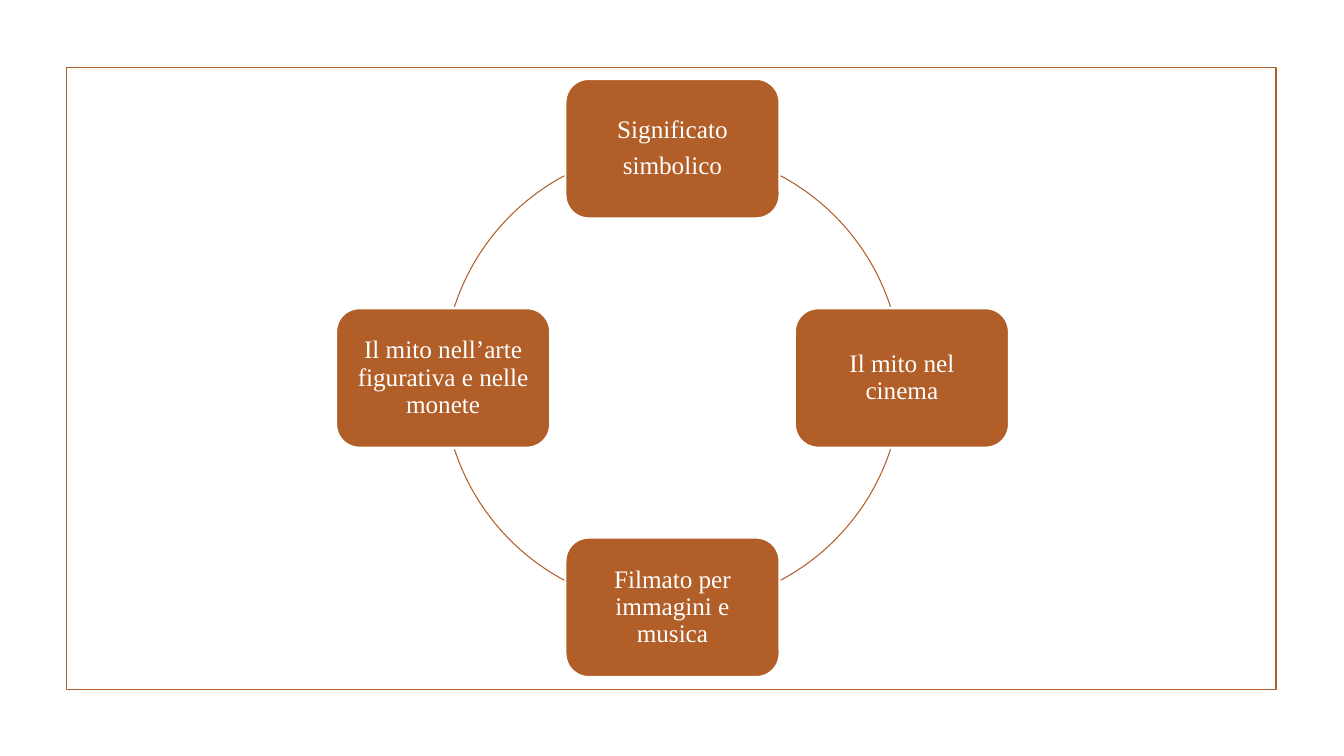
import math
import pptx
import pptx.util
import pptx.dml.color
import pptx.enum.shapes
import pptx.enum.text

Inches = pptx.util.Inches
Pt = pptx.util.Pt
SHAPE = pptx.enum.shapes.MSO_SHAPE

TOPICS = [
    ["Significato", "simbolico"],
    ["Il mito nel cinema"],
    ["Filmato per immagini e musica"],
    ["Il mito nell’arte figurativa e nelle monete"],
]

RUST = pptx.dml.color.RGBColor(0xB1, 0x5E, 0x28)
WHITE = pptx.dml.color.RGBColor(0xFF, 0xFF, 0xFF)
FONT = "Times New Roman"

CENTER_X, CENTER_Y = 6.67, 3.75
RADIUS = 2.275
TOPIC_W, TOPIC_H = 2.12, 1.38
ARC_START, ARC_END = 18.1, 61.9
DEGREE = 0.6


def add_outlined(slide, kind, left, top, width, height, color, weight):
    shape = slide.shapes.add_shape(
        kind, Inches(left), Inches(top), Inches(width), Inches(height))
    shape.shadow.inherit = False
    shape.fill.background()
    shape.line.color.rgb = color
    shape.line.width = Pt(weight)
    return shape


def add_topic(slide, lines, angle):
    x = CENTER_X + RADIUS * math.cos(angle)
    y = CENTER_Y + RADIUS * math.sin(angle)
    topic = add_outlined(slide, SHAPE.ROUNDED_RECTANGLE, x - TOPIC_W / 2,
                         y - TOPIC_H / 2, TOPIC_W, TOPIC_H, WHITE, 1.25)
    topic.fill.solid()
    topic.fill.fore_color.rgb = RUST
    frame = topic.text_frame
    frame.word_wrap = True
    frame.vertical_anchor = pptx.enum.text.MSO_ANCHOR.MIDDLE
    frame.margin_left = frame.margin_right = Inches(0.13)
    frame.margin_top = frame.margin_bottom = Inches(0.13)
    frame.text = "\n".join(lines)
    for paragraph in frame.paragraphs:
        paragraph.alignment = pptx.enum.text.PP_ALIGN.CENTER
        paragraph.line_spacing = 0.9
        paragraph.space_after = Pt(6.3)
        paragraph.font.name = FONT
        paragraph.font.size = Pt(18)
        paragraph.font.color.rgb = WHITE


def add_ring_arc(slide, quadrant_start):
    arc = add_outlined(slide, SHAPE.ARC, CENTER_X - RADIUS, CENTER_Y - RADIUS,
                       2 * RADIUS, 2 * RADIUS, RUST, 0.75)
    ends = [ARC_START, ARC_END]
    if quadrant_start % 180:
        ends = [90 - ARC_END, 90 - ARC_START]
    for i, end in enumerate(ends):
        arc.adjustments[i] = (quadrant_start + end) * DEGREE


def main():
    deck = pptx.Presentation()
    deck.slide_width = Inches(13.33)
    deck.slide_height = Inches(7.5)
    slide = deck.slides.add_slide(deck.slide_layouts[6])

    add_outlined(slide, SHAPE.RECTANGLE, 0.66, 0.67, 12, 6.17, RUST, 1.25)
    for i, lines in enumerate(TOPICS):
        add_topic(slide, lines, math.radians(90 * i - 90))
        add_ring_arc(slide, (90 * i + 270) % 360)

    deck.save("out.pptx")


if __name__ == "__main__":
    main()
